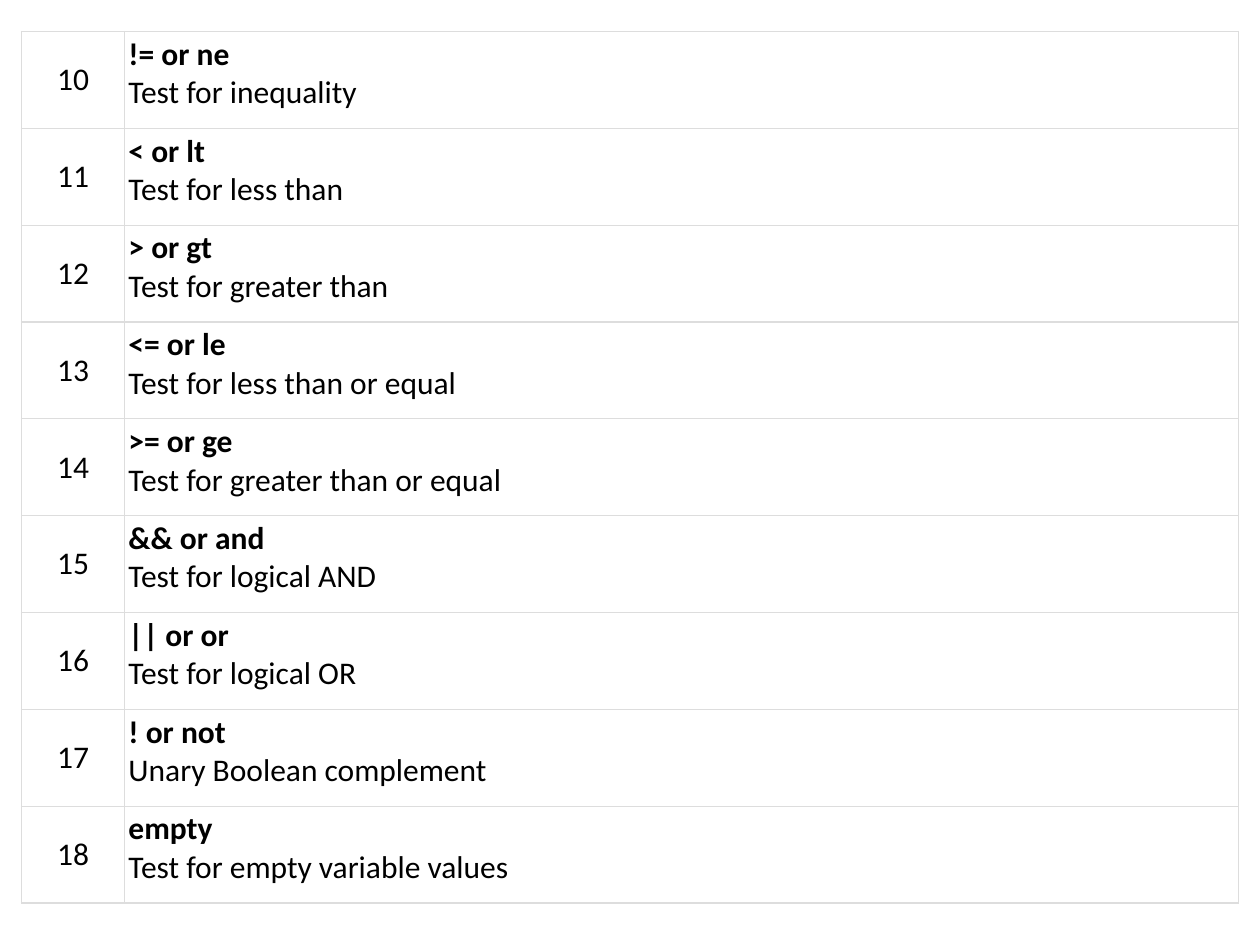
from lxml import etree
from pptx import Presentation
from pptx.dml.color import RGBColor
from pptx.enum.text import MSO_ANCHOR, PP_ALIGN
from pptx.oxml.ns import qn
from pptx.util import Inches, Pt

BLACK = RGBColor(0x00, 0x00, 0x00)
BORDER_GREY = RGBColor(0xDD, 0xDD, 0xDD)

CENTER = PP_ALIGN.CENTER
JUSTIFY = PP_ALIGN.JUSTIFY
MIDDLE = MSO_ANCHOR.MIDDLE
TOP = MSO_ANCHOR.TOP

BLANK_LAYOUT = 6
TABLE_LEFT, TABLE_TOP = 0.17, 0.25
COLUMN_WIDTHS = (0.82, 8.84)
TABLE_HEIGHT = 6.92
CELL_MARGIN = 0.03
FONT_NAME = "Calibri"
FONT_SIZE = 18
FIRST_NUMBER = 10

OPERATORS = (
    ("!= or ne", "Test for inequality"),
    ("< or lt", "Test for less than"),
    ("> or gt", "Test for greater than"),
    ("<= or le", "Test for less than or equal"),
    (">= or ge", "Test for greater than or equal"),
    ("&& or and", "Test for logical AND"),
    ("|| or or", "Test for logical OR"),
    ("! or not", "Unary Boolean complement"),
    ("empty", "Test for empty variable values"),
)


def set_borders(cell):
    properties = cell._tc.get_or_add_tcPr()
    for side in ("a:lnL", "a:lnR", "a:lnT", "a:lnB"):
        line = etree.SubElement(properties, qn(side), w=str(Pt(0.75)))
        fill = etree.SubElement(line, qn("a:solidFill"))
        etree.SubElement(fill, qn("a:srgbClr"), val=str(BORDER_GREY))


def format_cell(cell, anchor):
    set_borders(cell)
    cell.fill.background()
    cell.vertical_anchor = anchor
    margin = Inches(CELL_MARGIN)
    cell.margin_left = cell.margin_right = margin
    cell.margin_top = cell.margin_bottom = margin


def write_paragraph(paragraph, text, alignment, bold=False):
    paragraph.alignment = alignment
    run = paragraph.add_run()
    run.text = text
    run.font.name = FONT_NAME
    run.font.size = Pt(FONT_SIZE)
    run.font.bold = bold
    run.font.color.rgb = BLACK


def fill_row(table, row, number, operator, description):
    number_cell = table.cell(row, 0)
    format_cell(number_cell, MIDDLE)
    write_paragraph(number_cell.text_frame.paragraphs[0], str(number), CENTER)

    operator_cell = table.cell(row, 1)
    format_cell(operator_cell, TOP)
    text_frame = operator_cell.text_frame
    write_paragraph(text_frame.paragraphs[0], operator, JUSTIFY, bold=True)
    write_paragraph(text_frame.add_paragraph(), description, JUSTIFY)


def add_operator_table(slide):
    table = slide.shapes.add_table(
        len(OPERATORS), len(COLUMN_WIDTHS),
        Inches(TABLE_LEFT), Inches(TABLE_TOP),
        Inches(sum(COLUMN_WIDTHS)), Inches(TABLE_HEIGHT),
    ).table
    table.first_row = False
    table.horz_banding = False
    for column, width in zip(table.columns, COLUMN_WIDTHS):
        column.width = Inches(width)
    for row, (operator, description) in enumerate(OPERATORS):
        fill_row(table, row, FIRST_NUMBER + row, operator, description)


def main():
    presentation = Presentation()
    presentation.slide_width = Inches(10)
    presentation.slide_height = Inches(7.5)
    slide = presentation.slides.add_slide(presentation.slide_layouts[BLANK_LAYOUT])
    add_operator_table(slide)
    presentation.save("out.pptx")


if __name__ == "__main__":
    main()
